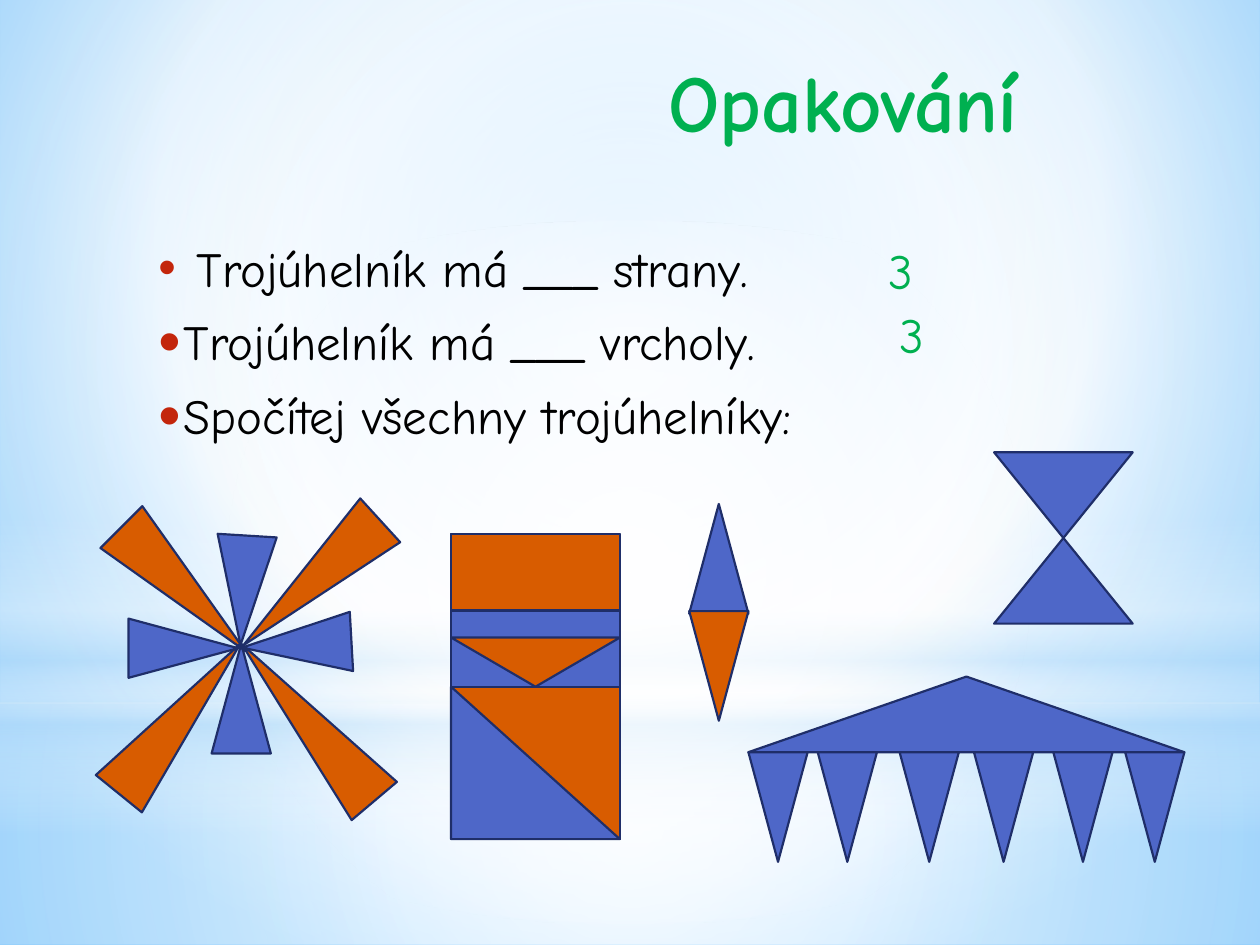
from dataclasses import dataclass

from lxml import etree
from pptx import Presentation
from pptx.dml.color import RGBColor
from pptx.enum.shapes import MSO_SHAPE
from pptx.enum.text import MSO_ANCHOR, PP_ALIGN
from pptx.oxml import parse_xml
from pptx.oxml.ns import nsdecls, qn
from pptx.util import Inches, Pt

RECT, ELLIPSE = MSO_SHAPE.RECTANGLE, MSO_SHAPE.OVAL
TRIANGLE, RIGHT_TRIANGLE = MSO_SHAPE.ISOSCELES_TRIANGLE, MSO_SHAPE.RIGHT_TRIANGLE
HOURGLASS = MSO_SHAPE.FLOWCHART_COLLATE
TOP = MSO_ANCHOR.TOP
LEFT, RIGHT = PP_ALIGN.LEFT, PP_ALIGN.RIGHT


@dataclass(frozen=True)
class Theme:
    font: str = "Comic Neue"
    green: str = "00B050"
    black: str = "000000"
    bullet: str = "C3260C"
    blue: str = "4E67C8"
    orange: str = "D85C00"
    outline: str = "1F2E69"
    white: str = "FFFFFF"
    haze: str = "B4DCFA"
    sky: str = "9ED5FF"
    deep_sky: str = "5BB9FF"
    title_size: float = 46
    body_size: float = 28
    small_size: float = 22
    line_width: float = 1.25


def add_run(paragraph, text, *, font, size, color, bold=False):
    run = paragraph.add_run()
    run.text = text
    run.font.name = font
    run.font.size = Pt(size)
    run.font.bold = bold
    run.font.color.rgb = RGBColor.from_string(color)


class SlideBuilder:
    def __init__(self, slide, theme):
        self.slide = slide
        self.theme = theme

    def gradient(self, owner, fill, stops, focus=None):
        """Stops are (position, colour, opacity) in percent; focus makes it circular."""
        fill.gradient()
        stop_xml = "".join(
            f'<a:gs pos="{pos * 1000}"><a:srgbClr val="{color}">'
            f'<a:alpha val="{opacity * 1000}"/></a:srgbClr></a:gs>'
            for pos, color, opacity in stops)
        if focus:
            sides = " ".join(f'{side}="{v * 1000}"' for side, v in zip("ltrb", focus))
            course = f'<a:path path="circle"><a:fillToRect {sides}/></a:path>'
        else:
            course = '<a:lin ang="5400000" scaled="0"/>'
        default = owner.element.find(".//" + qn("a:gradFill"))
        default.getparent().replace(default, parse_xml(
            f'<a:gradFill {nsdecls("a")} rotWithShape="1">'
            f'<a:gsLst>{stop_xml}</a:gsLst>{course}</a:gradFill>'))

    def shape(self, kind, left, top, width, height, rotation=0):
        shape = self.slide.shapes.add_shape(
            kind, Inches(left), Inches(top), Inches(width), Inches(height))
        shape.rotation = rotation
        shape.shadow.inherit = False
        return shape

    def glow(self, kind, box, stops, focus=None):
        shape = self.shape(kind, *box)
        shape.line.fill.background()
        self.gradient(shape, shape.fill, stops, focus)

    def figure(self, kind, left, top, width, height, color, rotation=0):
        shape = self.shape(kind, left, top, width, height, rotation)
        shape.fill.solid()
        shape.fill.fore_color.rgb = RGBColor.from_string(color)
        shape.line.color.rgb = RGBColor.from_string(self.theme.outline)
        shape.line.width = Pt(self.theme.line_width)

    def text_frame(self, left, top, width, height, wrap=True):
        frame = self.slide.shapes.add_textbox(
            Inches(left), Inches(top), Inches(width), Inches(height)).text_frame
        frame.word_wrap = wrap
        frame.vertical_anchor = TOP
        return frame

    def label(self, text, box, size, align=LEFT, wrap=True, bold=False):
        paragraph = self.text_frame(*box, wrap=wrap).paragraphs[0]
        paragraph.alignment = align
        add_run(paragraph, text, font=self.theme.font, size=size,
                color=self.theme.green, bold=bold)

    def bullets(self, items, box):
        """Each item is a list of (text, size) runs."""
        frame = self.text_frame(*box)
        for index, runs in enumerate(items):
            paragraph = frame.add_paragraph() if index else frame.paragraphs[0]
            paragraph.space_after = Pt(3)
            paragraph.space_before = Pt(0.2 * self.theme.body_size)
            props = paragraph._p.get_or_add_pPr()
            props.set("marL", str(Inches(0.25)))
            props.set("indent", str(Inches(-0.2)))
            bullet_color = etree.SubElement(props, qn("a:buClr"))
            etree.SubElement(bullet_color, qn("a:srgbClr"), val=self.theme.bullet)
            etree.SubElement(props, qn("a:buSzPct"), val="130000")
            etree.SubElement(props, qn("a:buFont"), typeface="Arial")
            etree.SubElement(props, qn("a:buChar"), char="•")
            for text, size in runs:
                add_run(paragraph, text, font=self.theme.font, size=size,
                        color=self.theme.black)


def main():
    theme = Theme()
    deck = Presentation()
    deck.slide_width, deck.slide_height = Inches(10), Inches(7.5)
    slide = deck.slides.add_slide(deck.slide_layouts[6])
    page = SlideBuilder(slide, theme)
    blue, orange, white, haze = theme.blue, theme.orange, theme.white, theme.haze

    # Sky background with layers of light
    centre = (50, 50, 50, 50)
    page.gradient(slide, slide.background.fill,
                  [(0, theme.sky, 100), (60, white, 100), (100, theme.deep_sky, 100)],
                  focus=(20, 10, 20, 60))
    page.glow(RECT, (0, 5.58, 10, 1.92),
              [(0, white, 91), (37, white, 76), (100, haze, 79)], centre)
    page.glow(RECT, (0, 0, 10, 5.58),
              [(0, white, 89), (48, white, 62), (100, haze, 79)], centre)
    page.glow(RECT, (0, 4.12, 10, 2.5),
              [(0, white, 0), (29, white, 30), (45, haze, 40),
               (55, white, 26), (65, haze, 60), (100, white, 0)])
    page.glow(ELLIPSE, (0, 1.75, 10, 5.58), [(0, white, 100), (56, white, 0)], centre)

    # Title, questions and answers
    page.label("Opakování", (1.06, 0.36, 7.12, 1.25), theme.title_size,
               align=RIGHT, bold=True)
    page.bullets([
        [(" ", theme.small_size), ("Trojúhelník má ___ strany.", theme.body_size)],
        [("Trojúhelník má ___ vrcholy.", theme.body_size)],
        [("Spočítej všechny trojúhelníky:", theme.body_size)],
    ], (1.11, 1.84, 7, 1.87))
    for left, top in [(6.95, 1.86), (7.04, 2.37)]:
        page.label("3", (left, top, 0.44, 0.57), theme.body_size, wrap=False)

    # Pinwheel: short blue blades, long orange blades
    blade_width, blade_height = 0.47, 0.87
    for left, top, height, rotation, color in [
        (1.68, 5.11, blade_height, 0, blue),
        (2.12, 4.68, blade_height, 266.8, blue),
        (1.70, 4.25, blade_height, 183.5, blue),
        (1.22, 4.71, blade_height, 90, blue),
        (1.22, 3.98, 1.39, 135, orange),
        (2.24, 3.89, 1.47, 227.6, orange),
        (1.19, 4.94, 1.53, 39, orange),
        (2.21, 4.92, 1.63, 319.8, orange),
    ]:
        page.figure(TRIANGLE, left, top, blade_width, height, color, rotation)

    # Diamond
    page.figure(TRIANGLE, 5.47, 4, blade_width, blade_height, blue)
    page.figure(TRIANGLE, 5.47, 4.85, blade_width, blade_height, orange, 180)

    # Roof with hanging teeth
    page.figure(TRIANGLE, 5.94, 5.37, 3.46, 0.6, blue)
    for left in (5.94, 6.49, 7.14, 7.73, 8.36, 8.93):
        page.figure(TRIANGLE, left, 5.97, blade_width, blade_height, blue, 180)

    # Hourglass
    page.figure(HOURGLASS, 7.89, 3.59, 1.1, 1.36, blue)

    # Tower of rectangles and triangles
    tower_left, tower_top, tower_width, half = 3.58, 4.24, 1.34, 1.21
    middle = tower_top + half
    for kind, top, height, color, rotation in [
        (RECT, tower_top, 2 * half, blue, 0),
        (RECT, middle, half, orange, 0),
        (RIGHT_TRIANGLE, middle, half, blue, 0),
        (RECT, tower_top, half / 2, orange, 0),
        (TRIANGLE, middle - 0.39, 0.39, orange, 180),
    ]:
        page.figure(kind, tower_left, top, tower_width, height, color, rotation)

    deck.save("out.pptx")


if __name__ == "__main__":
    main()
